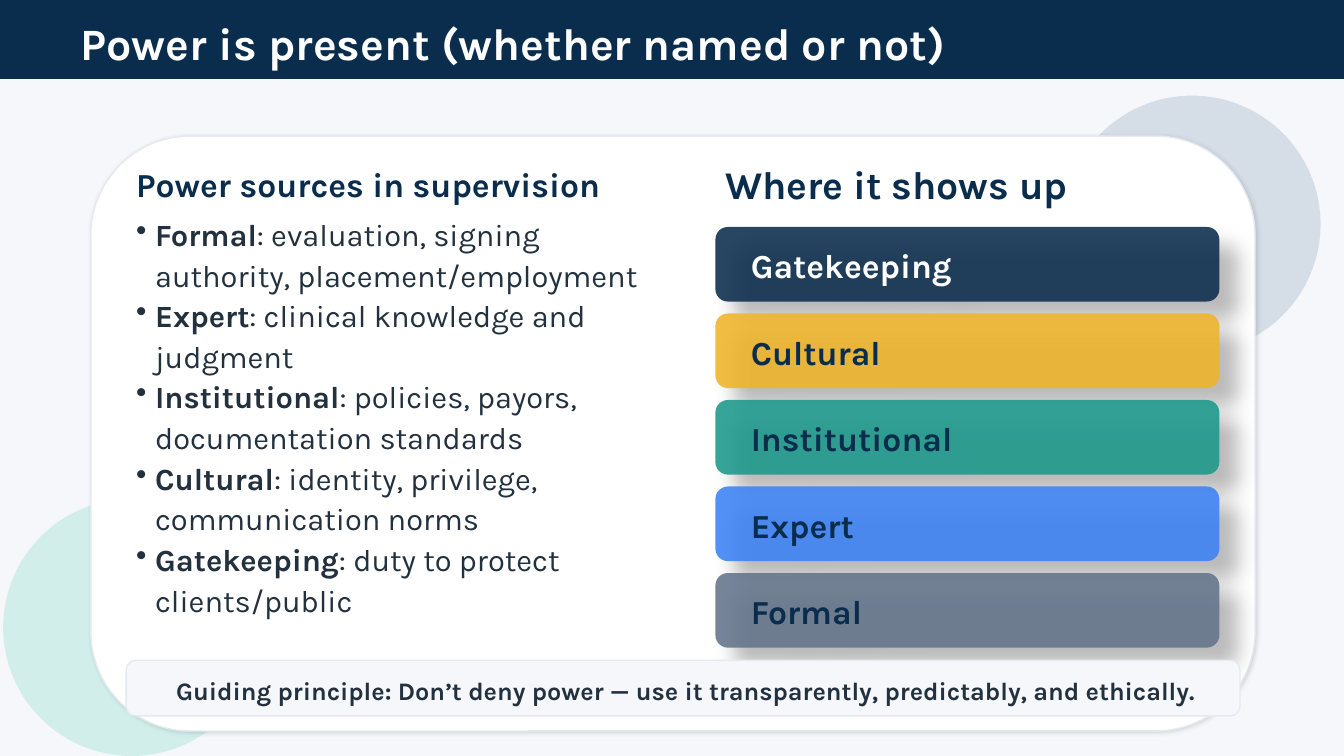
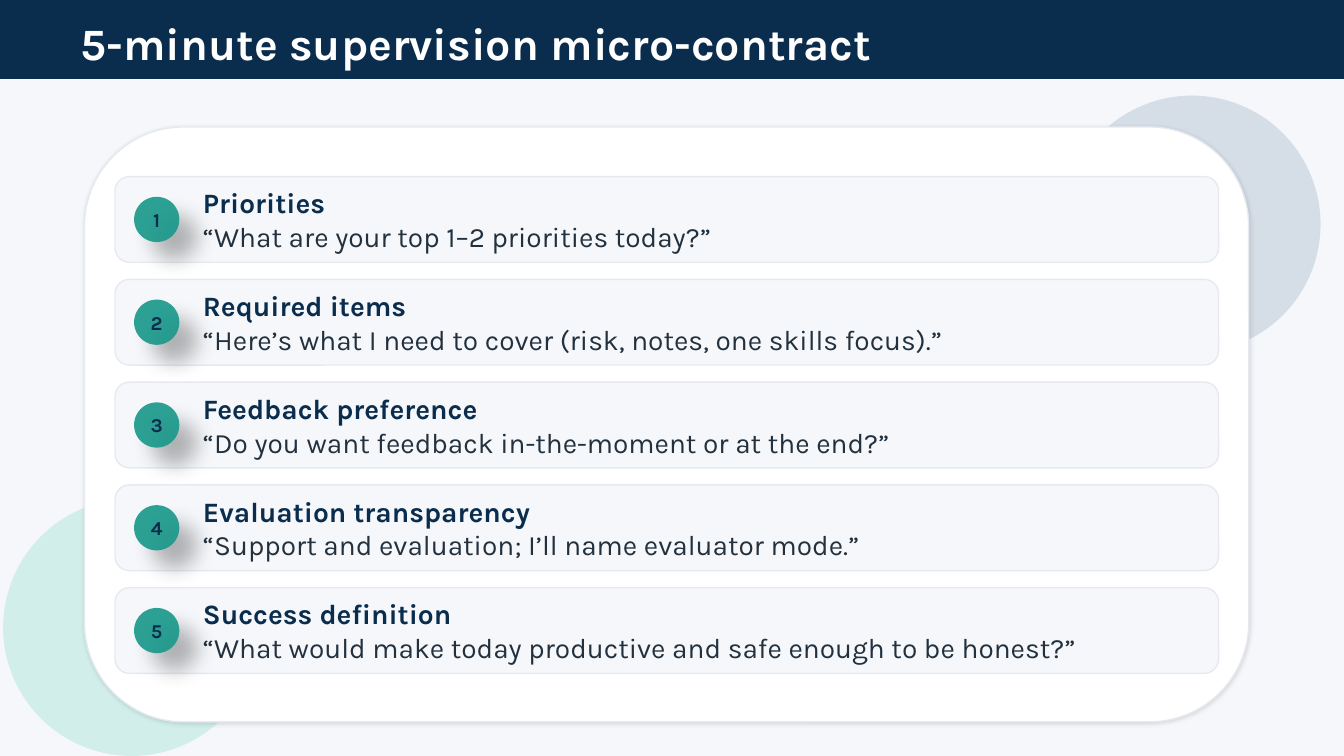
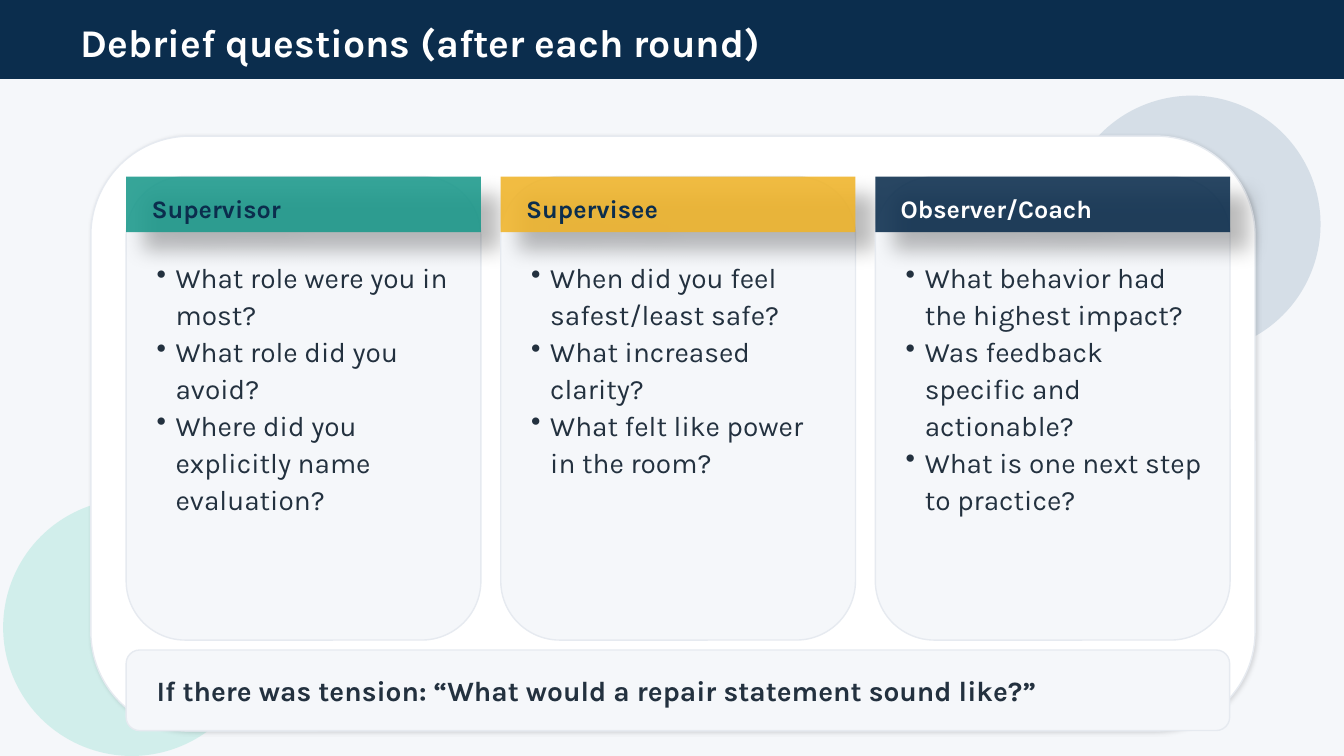
"""Build three supervision training slides."""
from dataclasses import dataclass

from lxml import etree
from pptx import Presentation
from pptx import util as u
from pptx.dml.color import RGBColor
from pptx.enum import shapes, text
from pptx.oxml.ns import qn


@dataclass(frozen=True)
class Theme:
    font: str = "Karla"
    navy: str = "0B2D4D"
    ink: str = "23313F"
    white: str = "FFFFFF"
    mist: str = "F5F7FA"
    edge: str = "E6EAF0"
    mint: str = "BFEAE3"
    haze: str = "AFC1D0"
    teal: str = "1B998B"
    gold: str = "F0B429"
    blue: str = "3B82F6"
    slate: str = "64748B"
    title: int = 32
    heading: int = 24
    large: int = 28
    list: int = 22
    body: int = 20
    label: int = 18
    badge: int = 14
    soft: tuple = (15, 3, 1.2)
    deep: tuple = (30, 15, 18)


theme = Theme()
RECT = shapes.MSO_SHAPE.RECTANGLE
ROUND = shapes.MSO_SHAPE.ROUNDED_RECTANGLE
OVAL = shapes.MSO_SHAPE.OVAL
LEFT, CENTER = text.PP_ALIGN.LEFT, text.PP_ALIGN.CENTER
TOP, MIDDLE = text.MSO_ANCHOR.TOP, text.MSO_ANCHOR.MIDDLE


def draw(page, kind, left, top, width, height, fill=None, line=None, opacity=100,
         shadow=None, inset=(0, 0, 0, 0), anchor=MIDDLE):
    place = [u.Cm(length) for length in (left, top, width, height)]
    if kind is None:
        box = page.shapes.add_textbox(*place)
    else:
        box = page.shapes.add_shape(kind, *place)
        box.fill.solid()
        box.fill.fore_color.rgb = RGBColor.from_string(fill)
        if opacity < 100:
            tint = box._element.spPr.find(qn("a:solidFill"))[0]
            etree.SubElement(tint, qn("a:alpha"), val=str(opacity * 1000))
        if line:
            box.line.color.rgb = RGBColor.from_string(line)
            box.line.width = u.Pt(1)
        else:
            box.line.fill.background()
        box.shadow.inherit = False
    if shadow:
        strength, blur, distance = shadow
        effects = box._element.spPr.find(qn("a:effectLst"))
        outer = etree.SubElement(effects, qn("a:outerShdw"), blurRad=str(u.Pt(blur)),
                                 dist=str(u.Pt(distance)), dir="2700000",
                                 algn="tl", rotWithShape="0")
        shade = etree.SubElement(outer, qn("a:srgbClr"), val="000000")
        etree.SubElement(shade, qn("a:alpha"), val=str(strength * 1000))
    frame = box.text_frame
    frame.word_wrap = True
    frame.vertical_anchor = anchor
    (frame.margin_left, frame.margin_top,
     frame.margin_right, frame.margin_bottom) = [u.Cm(gap) for gap in inset]
    return box


def write(box, words, size, color=theme.ink, bold=False, align=LEFT, lead="", bullet=False):
    frame = box.text_frame
    para = frame.add_paragraph() if frame.text else frame.paragraphs[0]
    para.alignment = align
    if bullet:
        para.line_spacing = 1.1
        layout = para._p.get_or_add_pPr()
        layout.set("marL", str(u.Cm(0.48)))
        layout.set("indent", str(-u.Cm(0.48)))
        etree.SubElement(layout, qn("a:buChar"), char="•")
    for part, heavy in ((lead, True), (words, bold)):
        if part:
            span = para.add_run()
            span.text = part
            span.font.name = theme.font
            span.font.size = u.Pt(size)
            span.font.bold = heavy
            span.font.color.rgb = RGBColor.from_string(color)


deck = Presentation()
deck.slide_width, deck.slide_height = u.Cm(33.87), u.Cm(19.05)
backdrop = deck.slide_master.background.fill
backdrop.solid()
backdrop.fore_color.rgb = RGBColor.from_string(theme.mist)

pages = []
for heading, size, card_left, card_top in (
    ("Power is present (whether named or not)", theme.title, 2.29, 3.43),
    ("5-minute supervision micro-contract", theme.title, 2.13, 3.2),
    ("Debrief questions (after each round)", theme.large, 2.29, 3.43),
):
    page = deck.slides.add_slide(deck.slide_layouts[5])
    title = page.shapes.title
    title.left, title.top = u.Cm(0), u.Cm(0)
    title.width, title.height = deck.slide_width, u.Cm(1.98)
    title.fill.solid()
    title.fill.fore_color.rgb = RGBColor.from_string(theme.navy)
    title.line.color.rgb = RGBColor.from_string(theme.navy)
    title.line.width = u.Pt(1)
    frame = title.text_frame
    frame.auto_size = text.MSO_AUTO_SIZE.NONE
    frame.vertical_anchor = MIDDLE
    frame.margin_left, frame.margin_top, frame.margin_bottom = u.Cm(2.03), u.Cm(0.15), u.Cm(0)
    write(title, heading, size, theme.white, bold=True)
    draw(page, OVAL, 0.08, 12.57, 6.48, 6.48, theme.mint, opacity=65)
    draw(page, OVAL, 26.8, 2.41, 6.48, 6.48, theme.haze, opacity=45)
    draw(page, ROUND, card_left, card_top, 29.34, 14.99, theme.white, theme.edge,
         shadow=theme.soft)
    pages.append(page)
power, contract, debrief = pages

for heading, size, left in (
    ("Power sources in supervision", theme.heading, 3.18),
    ("Where it shows up", theme.large, 18.03),
):
    box = draw(power, None, left, 4.19, 12.7, 0.89, inset=(0.25, 0, 0.25, 0))
    write(box, heading, size, theme.navy, bold=True)

sources = draw(power, None, 3.18, 5.21, 14.22, 12.45,
               inset=(0.25, 0.13, 0.25, 0.13), anchor=TOP)
for source, detail in (
    ("Formal", ": evaluation, signing authority, placement/employment"),
    ("Expert", ": clinical knowledge and judgment"),
    ("Institutional", ": policies, payors, documentation standards"),
    ("Cultural", ": identity, privilege, communication norms"),
    ("Gatekeeping", ": duty to protect clients/public"),
):
    write(sources, detail, theme.list, lead=source, bullet=True)

for index, (label, fill, color) in enumerate((
    ("Gatekeeping", theme.navy, theme.white),
    ("Cultural", theme.gold, theme.navy),
    ("Institutional", theme.teal, theme.navy),
    ("Expert", theme.blue, theme.navy),
    ("Formal", theme.slate, theme.navy),
)):
    bar = draw(power, ROUND, 18.03, 5.72 + index * 2.18, 12.7, 1.88, fill,
               opacity=88, shadow=theme.deep, inset=(0.8, 0.05, 0, 0))
    write(bar, label, theme.heading, color, bold=True)

principle = draw(power, ROUND, 3.18, 16.64, 28.07, 1.4, theme.mist, theme.edge,
                 inset=(0.13, 0.1, 0, 0))
write(principle, "Guiding principle: Don’t deny power — use it transparently, "
      "predictably, and ethically.", theme.label, bold=True, align=CENTER)

for index, (step, quote) in enumerate((
    ("Priorities", "“What are your top 1–2 priorities today?”"),
    ("Required items", "“Here’s what I need to cover (risk, notes, one skills focus).”"),
    ("Feedback preference", "“Do you want feedback in-the-moment or at the end?”"),
    ("Evaluation transparency", "“Support and evaluation; I’ll name evaluator mode.”"),
    ("Success definition", "“What would make today productive and safe enough to be honest?”"),
)):
    top = 4.45 + index * 2.59
    row = draw(contract, ROUND, 2.9, top, 27.81, 2.16, theme.mist, theme.edge,
               inset=(2.11, 0, 0, 0))
    write(row, step, theme.body, theme.navy, bold=True)
    write(row, quote, theme.body)
    badge = draw(contract, OVAL, 3.38, top + 0.51, 1.14, 1.14, theme.teal,
                 opacity=92, shadow=theme.deep)
    write(badge, str(index + 1), theme.badge, theme.navy, bold=True, align=CENTER)

for index, (role, fill, color, questions) in enumerate((
    ("Supervisor", theme.teal, theme.navy,
     ("What role were you in most?", "What role did you avoid?",
      "Where did you explicitly name evaluation?")),
    ("Supervisee", theme.gold, theme.navy,
     ("When did you feel safest/least safe?", "What increased clarity?",
      "What felt like power in the room?")),
    ("Observer/Coach", theme.navy, theme.white,
     ("What behavior had the highest impact?", "Was feedback specific and actionable?",
      "What is one next step to practice?")),
)):
    left = 3.18 + index * 9.44
    column = draw(debrief, ROUND, left, 4.45, 8.94, 11.68, theme.mist, theme.edge,
                  inset=(0.33, 1.6, 0.2, 0), anchor=TOP)
    for question in questions:
        write(column, question, theme.body, bullet=True)
    header = draw(debrief, RECT, left, 4.45, 8.94, 1.4, fill, opacity=88,
                  shadow=theme.deep, inset=(0.64, 0.23, 0, 0))
    write(header, role, theme.label, color, bold=True)

repair = draw(debrief, ROUND, 3.18, 16.38, 27.81, 2.03, theme.mist, theme.edge,
              inset=(0.67, 0, 0, 0))
write(repair, "If there was tension: “What would a repair statement sound like?”",
      theme.body, bold=True)

deck.save("out.pptx")
